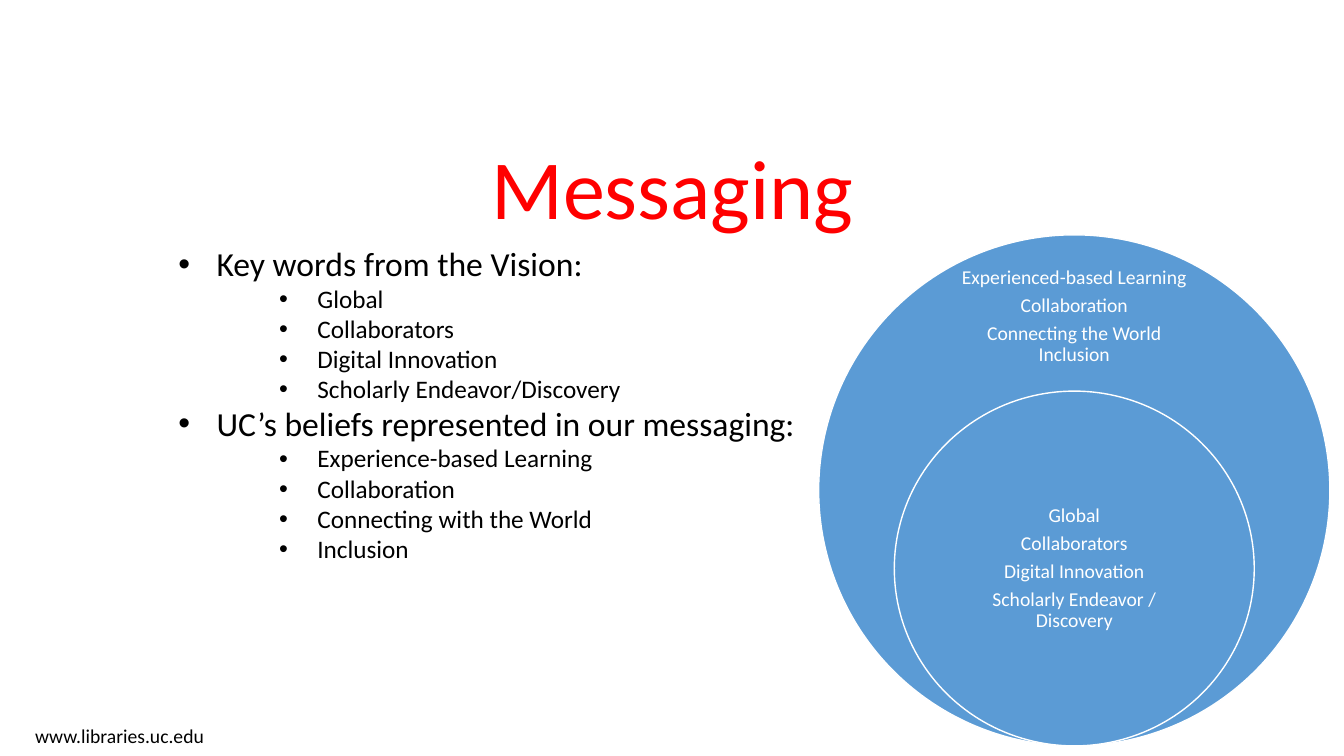
from pptx import Presentation
from pptx.dml.color import RGBColor
from pptx.enum.shapes import MSO_SHAPE
from pptx.enum.text import MSO_ANCHOR, PP_ALIGN
from pptx.util import Inches, Pt
from lxml import etree

OVAL = MSO_SHAPE.OVAL
TOP, MIDDLE, BOTTOM = MSO_ANCHOR.TOP, MSO_ANCHOR.MIDDLE, MSO_ANCHOR.BOTTOM
LEFT, CENTER = PP_ALIGN.LEFT, PP_ALIGN.CENTER
NS = "http://schemas.openxmlformats.org/drawingml/2006/main"

BLACK, WHITE, RED, BLUE = "000000", "FFFFFF", "FF0000", "5B9BD5"

TOPICS = [
    ("Key words from the Vision:",
     ["Global", "Collaborators", "Digital Innovation",
      "Scholarly Endeavor/Discovery"]),
    ("UC’s beliefs represented in our messaging:",
     ["Experience-based Learning", "Collaboration",
      "Connecting with the World", "Inclusion"]),
]
BELIEFS = ["Experienced-based Learning", "Collaboration",
           "Connecting the World\vInclusion"]
VISION = ["Global", "Collaborators", "Digital Innovation",
          "Scholarly Endeavor / Discovery"]


def color(code):
    return RGBColor.from_string(code)


def assign(item, values):
    for name, value in values.items():
        setattr(item, name, value)


def add_frame(slide, box, anchor=TOP, inset=None):
    frame = slide.shapes.add_textbox(*map(Inches, box)).text_frame
    assign(frame, {"word_wrap": True, "vertical_anchor": anchor})
    if inset is not None:
        sides = ("left", "top", "right", "bottom")
        assign(frame, {f"margin_{side}": Inches(inset) for side in sides})
    return frame


def add_line(frame, text, size, code, bullet=None, **layout):
    first = not frame.paragraphs[0].runs
    para = frame.paragraphs[0] if first else frame.add_paragraph()
    para.text = text
    if first:
        layout.pop("space_before", None)
    assign(para, layout)
    if bullet is not None:
        props = para._p.get_or_add_pPr()
        props.set("marL", str(Inches(bullet)))
        props.set("indent", str(Inches(-0.38)))
        etree.SubElement(props, f"{{{NS}}}buFont").set("typeface", "Arial")
        etree.SubElement(props, f"{{{NS}}}buChar").set("char", "•")
    for run in para.runs:
        assign(run.font, {"name": "Calibri", "size": Pt(size)})
        run.font.color.rgb = color(code)


def add_title(slide, box):
    frame = add_frame(slide, box, BOTTOM)
    add_line(frame, "Messaging", 60, RED, alignment=CENTER, line_spacing=0.9)


def add_topics(slide, box):
    frame = add_frame(slide, box)
    layout = {"alignment": LEFT, "line_spacing": 0.9, "space_before": Pt(2)}
    for head, points in TOPICS:
        add_line(frame, head, 24, BLACK, 0.38, **layout)
        for point in points:
            add_line(frame, point, 18, BLACK, 1.38, level=2, **layout)


def add_ring(slide, box, inner, lines):
    """Draw an oval with its label, placed from the oval's corner."""
    left, top, width, height = box
    oval = slide.shapes.add_shape(OVAL, *map(Inches, box))
    oval.shadow.inherit = False
    oval.fill.solid()
    oval.fill.fore_color.rgb = color(BLUE)
    oval.line.color.rgb = color(WHITE)
    oval.line.width = Pt(1)
    drop, wide, high = inner
    label = (left + (width - wide) / 2, top + drop, wide, high)
    frame = add_frame(slide, label, MIDDLE, 0.11)
    for line in lines:
        add_line(frame, line, 14, WHITE, alignment=CENTER,
                 line_spacing=0.9, space_after=Pt(4.9))


def add_rings(slide, box):
    left, top, width, height = box
    add_ring(slide, box, (0.38, 2.66, 0.86), BELIEFS)
    # The inner oval is centred and rests on the base of the outer one
    wide, high = 3.57, 3.52
    core = (left + (width - wide) / 2, top + height - high, wide, high)
    add_ring(slide, core, (0.88, 2.52, 1.76), VISION)


def add_footer(slide, box):
    add_line(add_frame(slide, box), "www.libraries.uc.edu", 14, BLACK)


def main():
    deck = Presentation()
    deck.slide_width, deck.slide_height = Inches(13.33), Inches(7.5)
    slide = deck.slides.add_slide(deck.slide_layouts[6])
    add_footer(slide, (0.25, 7.13, 3.55, 0.34))
    add_title(slide, (1.67, 1.23, 10, 1.18))
    add_topics(slide, (1.67, 2.41, 10, 4.2))
    add_rings(slide, (8.12, 2.33, 5.07, 5.07))
    deck.save("out.pptx")


if __name__ == "__main__":
    main()
